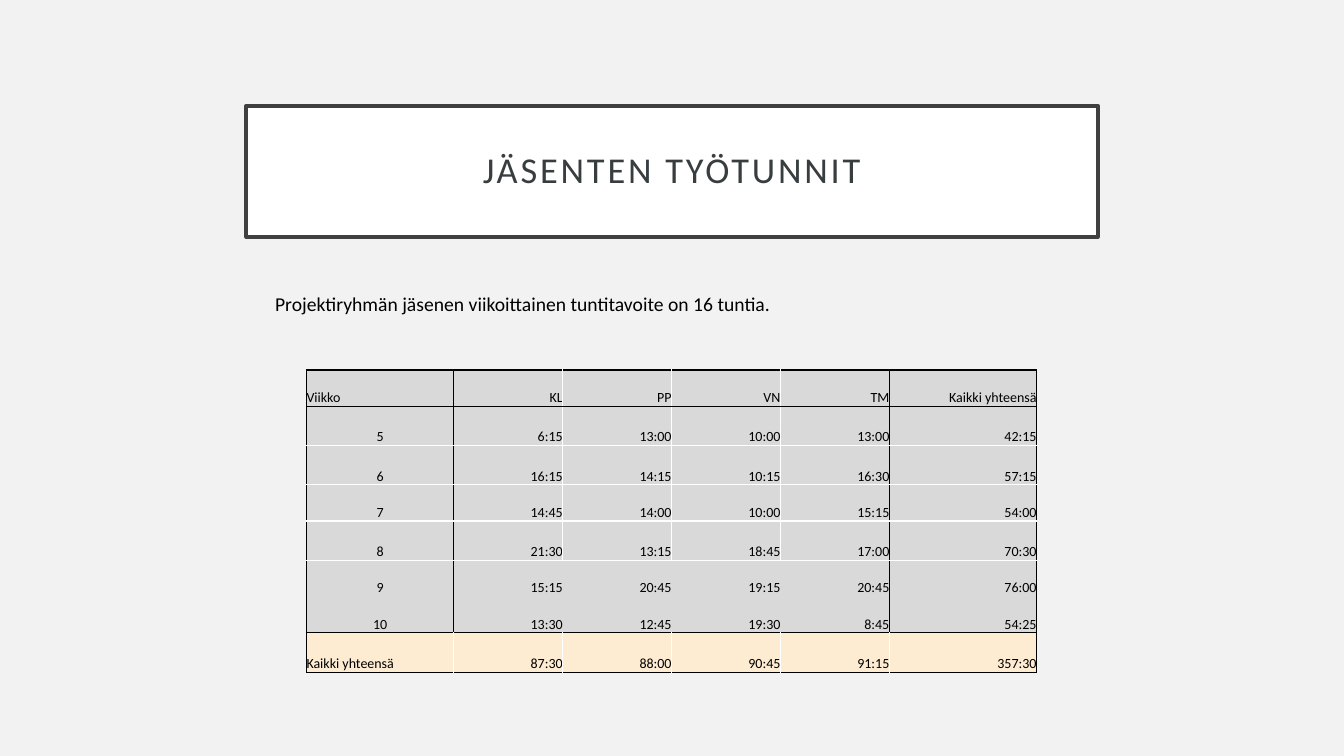
from dataclasses import dataclass
from typing import Any, Optional

from lxml import etree
from pptx import Presentation
from pptx import util as u
from pptx.dml.color import RGBColor
from pptx.enum import shapes, text
from pptx.oxml.ns import qn

COLORS = {
    "background": "F2F2F2",
    "white": "FFFFFF",
    "black": "000000",
    "frame": "404040",
    "title": "383E40",
    "week": "D9D9D9",
    "total": "FDECD2",
}
FONT = "Calibri"
ALIGN = text.PP_ALIGN
ANCHOR = text.MSO_ANCHOR

HOURS = [
    ["Viikko", "KL", "PP", "VN", "TM", "Kaikki yhteensä"],
    ["5", "6:15", "13:00", "10:00", "13:00", "42:15"],
    ["6", "16:15", "14:15", "10:15", "16:30", "57:15"],
    ["7", "14:45", "14:00", "10:00", "15:15", "54:00"],
    ["8", "21:30", "13:15", "18:45", "17:00", "70:30"],
    ["9", "15:15", "20:45", "19:15", "20:45", "76:00"],
    ["10", "13:30", "12:45", "19:30", "8:45", "54:25"],
    ["Kaikki yhteensä", "87:30", "88:00", "90:45", "91:15", "357:30"],
]
COLUMN_WIDTHS = [1.46, 1.08, 1.08, 1.08, 1.08, 1.46]
ROW_HEIGHTS = [0.36, 0.39, 0.39, 0.36, 0.39, 0.36, 0.36, 0.39]
LAST_ROW = len(HOURS) - 1
LAST_COLUMN = len(COLUMN_WIDTHS) - 1


@dataclass(frozen=True)
class TextStyle:
    size: float
    color: str
    align: Any = ALIGN.LEFT
    line_spacing: Optional[float] = None
    character_spacing: int = 0


@dataclass(frozen=True)
class TextBlock:
    wording: str
    box: tuple[float, float, float, float]
    style: TextStyle
    frame_format: dict[str, Any]
    framed: bool = False


BLOCKS = [
    TextBlock(
        "JÄSENTEN TYÖTUNNIT",
        (2.44, 1.05, 8.45, 1.3),
        TextStyle(26, "title", ALIGN.CENTER, 0.9, 200),
        {"word_wrap": True, "vertical_anchor": ANCHOR.MIDDLE}
        | {f"margin_{side}": u.Inches(0.2) for side in ("left", "top", "right", "bottom")},
        framed=True,
    ),
    TextBlock(
        "Projektiryhmän jäsenen viikoittainen tuntitavoite on 16 tuntia.",
        (2.63, 2.85, 7.59, 0.34),
        TextStyle(14, "black"),
        {"word_wrap": True, "auto_size": text.MSO_AUTO_SIZE.SHAPE_TO_FIT_TEXT},
    ),
]
CELL_FORMAT = {"vertical_anchor": ANCHOR.BOTTOM} | {
    f"margin_{side}": 0 for side in ("left", "top", "right", "bottom")
}


def rgb(name: str) -> RGBColor:
    return RGBColor.from_string(COLORS[name])


def apply_format(target: Any, values: dict[str, Any]) -> None:
    for name, value in values.items():
        setattr(target, name, value)


def write_text(frame: Any, wording: str, style: TextStyle) -> None:
    paragraph = frame.paragraphs[0]
    apply_format(paragraph, {"alignment": style.align, "line_spacing": style.line_spacing})
    run = paragraph.add_run()
    run.text = wording
    apply_format(run.font, {"name": FONT, "size": u.Pt(style.size), "bold": False})
    run.font.color.rgb = rgb(style.color)
    if style.character_spacing:
        run.font._element.set("spc", str(style.character_spacing))


def draw_block(slide: Any, block: TextBlock) -> None:
    box = [u.Inches(length) for length in block.box]
    if block.framed:
        shape = slide.shapes.add_shape(shapes.MSO_SHAPE.RECTANGLE, *box)
        shape.shadow.inherit = False
        shape.fill.solid()
        shape.fill.fore_color.rgb = rgb("white")
        shape.line.color.rgb = rgb("frame")
        shape.line.width = u.Pt(2.5)
    else:
        shape = slide.shapes.add_textbox(*box)
    apply_format(shape.text_frame, block.frame_format)
    write_text(shape.text_frame, block.wording, block.style)


def vertical_border(row: int, edge: int) -> Optional[str]:
    outer = edge in (0, LAST_COLUMN + 1)
    divider = edge in (1, LAST_COLUMN) and row < LAST_ROW
    if outer or divider:
        return "black"
    return None if row in (5, 6) else "white"


def horizontal_border(edge: int) -> Optional[str]:
    if edge in (0, 1, LAST_ROW, LAST_ROW + 1):
        return "black"
    return None if edge == 6 else "white"


def draw_borders(cell: Any, row: int, column: int) -> None:
    properties = cell._tc.get_or_add_tcPr()
    borders = {
        "lnL": vertical_border(row, column),
        "lnR": vertical_border(row, column + 1),
        "lnT": horizontal_border(row),
        "lnB": horizontal_border(row + 1),
    }
    for tag, color in borders.items():
        line = etree.SubElement(properties, qn(f"a:{tag}"), w=str(u.Pt(1)))
        if color:
            fill = etree.SubElement(line, qn("a:solidFill"))
            etree.SubElement(fill, qn("a:srgbClr"), val=COLORS[color])
        else:
            etree.SubElement(line, qn("a:noFill"))


def cell_align(row: int, column: int) -> Any:
    if column:
        return ALIGN.RIGHT
    return ALIGN.LEFT if row in (0, LAST_ROW) else ALIGN.CENTER


def draw_hours(slide: Any) -> None:
    box = [u.Inches(length) for length in (3.04, 3.67, sum(COLUMN_WIDTHS), sum(ROW_HEIGHTS))]
    table = slide.shapes.add_table(len(HOURS), len(COLUMN_WIDTHS), *box).table
    apply_format(table, {"first_row": False, "horz_banding": False})
    for column, width in zip(table.columns, COLUMN_WIDTHS):
        column.width = u.Inches(width)
    for row, height in zip(table.rows, ROW_HEIGHTS):
        row.height = u.Inches(height)
    for row, values in enumerate(HOURS):
        for column, value in enumerate(values):
            cell = table.cell(row, column)
            apply_format(cell, CELL_FORMAT)
            draw_borders(cell, row, column)
            cell.fill.solid()
            cell.fill.fore_color.rgb = rgb("total" if row == LAST_ROW else "week")
            write_text(cell.text_frame, value, TextStyle(10, "black", cell_align(row, column)))


def main() -> None:
    presentation = Presentation()
    presentation.slide_width = u.Inches(13.33)
    presentation.slide_height = u.Inches(7.5)
    slide = presentation.slides.add_slide(presentation.slide_layouts[6])
    slide.background.fill.solid()
    slide.background.fill.fore_color.rgb = rgb("background")
    for block in BLOCKS:
        draw_block(slide, block)
    draw_hours(slide)
    presentation.save("out.pptx")


if __name__ == "__main__":
    main()
